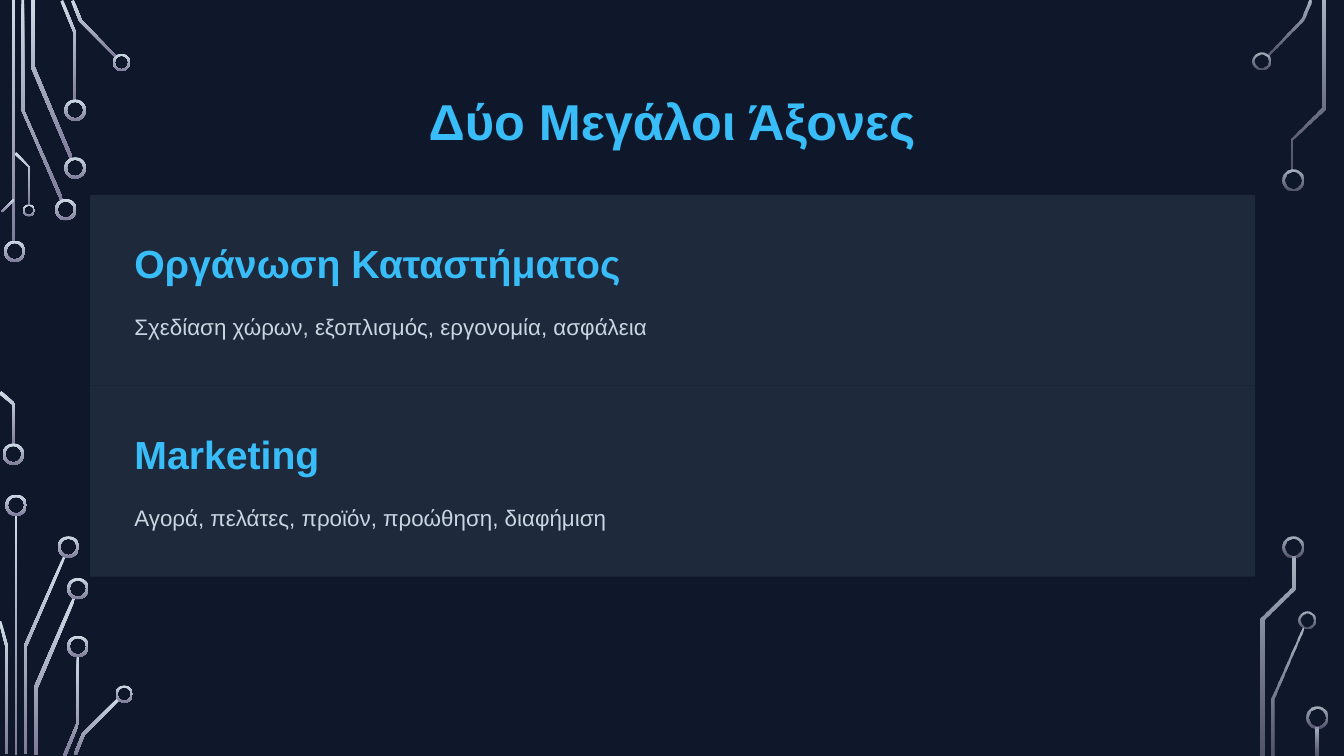
from dataclasses import dataclass
from typing import NamedTuple

from lxml.etree import SubElement
from pptx import Presentation
from pptx.dml.color import RGBColor
from pptx.enum.shapes import MSO_SHAPE
from pptx.enum.text import PP_ALIGN
from pptx.oxml.ns import qn
from pptx.util import Cm, Pt


@dataclass(frozen=True)
class Theme:
    back: str = "0F172A"
    panel: str = "1E293B"
    accent: str = "38BDF8"
    body: str = "CBD5E1"
    light: str = "CEDBE6"
    dark: str = "7F7B9A"
    font: str = "Arial"
    title_size: int = 27
    head_size: int = 21
    body_size: int = 12


class Ring(NamedTuple):
    left: float
    top: float
    size: float


class Bar(NamedTuple):
    left: float
    top: float
    height: float


class Side(NamedTuple):
    bars: list
    traces: list
    rings: list
    alphas: tuple


class Topic(NamedTuple):
    head: str
    body: str


class Style(NamedTuple):
    size: int
    color: str
    bold: bool
    lead: float
    align: PP_ALIGN


THEME = Theme()
UNIT = Cm(0.0254)
BAR_WIDTH = 0.02
RING_WALL = 0.115
TITLE = Style(THEME.title_size, THEME.accent, True, 1.2, PP_ALIGN.CENTER)
HEAD = Style(THEME.head_size, THEME.accent, True, 1.2, PP_ALIGN.LEFT)
BODY = Style(THEME.body_size, THEME.body, False, 1.4, PP_ALIGN.LEFT)

LEFT = Side(
    bars=[Bar(0.09, 0, 1.79), Bar(0.11, 3.82, 1.8)],
    traces=[
        [(45, 149), (16, 82), (16, 0), (18, 0), (18, 82), (47, 148)],
        [(52, 118), (23, 50), (23, 0), (26, 0), (26, 50), (54, 117)],
        [(57, 75), (55, 75), (55, 25), (45, 1), (47, 0), (57, 25)],
        [(86, 43), (59, 16), (53, 1), (55, 0), (61, 15), (87, 42)],
        [(2, 158), (1, 157), (10, 148), (11, 149)],
        [(11, 331), (9, 331), (9, 301), (-1, 293), (1, 291), (11, 300)],
        [(22, 152), (21, 152), (21, 124), (11, 115), (12, 113), (22, 124)],
        [(20, 561), (18, 561), (18, 480), (47, 414), (49, 414), (20, 481)],
        [(6, 561), (4, 561), (4, 481), (-1, 462), (1, 462), (6, 481)],
        [(28, 562), (25, 562), (25, 512), (54, 445), (56, 446), (28, 512)],
        [(49, 563), (47, 562), (57, 538), (57, 488), (59, 488), (59, 538)],
        [(57, 562), (55, 561), (61, 546), (88, 519), (89, 521), (63, 547)],
    ],
    rings=[
        Ring(0.03, 1.79, 0.16), Ring(0.02, 3.3, 0.16), Ring(0.41, 1.48, 0.16),
        Ring(0.48, 1.17, 0.16), Ring(0.48, 0.74, 0.16), Ring(0.84, 0.4, 0.13),
        Ring(0.17, 1.52, 0.09), Ring(0.04, 3.68, 0.16), Ring(0.43, 3.99, 0.16),
        Ring(0.5, 4.3, 0.16), Ring(0.5, 4.73, 0.16), Ring(0.86, 5.1, 0.13),
    ],
    alphas=(100, 100),
)
RIGHT = Side(
    bars=[Bar(9.79, 5.41, 0.21)],
    traces=[
        [(943, 42), (942, 41), (968, 14), (974, 0), (976, 1), (970, 15)],
        [(948, 562), (946, 562), (946, 520), (969, 467), (970, 468), (948, 520)],
        [(962, 127), (961, 127), (961, 103), (983, 80), (983, 0), (986, 0),
         (986, 81), (962, 104)],
        [(941, 562), (938, 562), (938, 460), (961, 437), (961, 414), (964, 414),
         (964, 438), (941, 461)],
    ],
    rings=[
        Ring(9.32, 0.39, 0.13), Ring(9.54, 1.26, 0.16), Ring(9.66, 4.55, 0.13),
        Ring(9.54, 3.99, 0.16), Ring(9.72, 5.26, 0.16),
    ],
    alphas=(80, 60),
)
TOPICS = [
    Topic("Οργάνωση Καταστήματος", "Σχεδίαση χώρων, εξοπλισμός, εργονομία, ασφάλεια"),
    Topic("Marketing", "Αγορά, πελάτες, προϊόν, προώθηση, διαφήμιση"),
]


def scale(*values: float) -> list:
    return [Cm(value * 2.54) for value in values]


def shade(shape, alphas: tuple) -> None:
    shape.shadow.inherit = False
    shape.line.fill.background()
    shape.fill.gradient()
    shape.fill.gradient_angle = 270
    stops = shape.fill.gradient_stops
    for stop, color, place in zip(stops, (THEME.light, THEME.dark), (0, 1)):
        stop.color.rgb = RGBColor.from_string(color)
        stop.position = place
    for node, alpha in zip(shape.element.spPr.iter(qn("a:srgbClr")), alphas):
        if alpha < 100:
            SubElement(node, qn("a:alpha")).set("val", str(alpha * 1000))


def draw_side(slide, side: Side) -> None:
    for bar in side.bars:
        box = scale(bar.left, bar.top, BAR_WIDTH, bar.height)
        shade(slide.shapes.add_shape(MSO_SHAPE.RECTANGLE, *box), side.alphas)
    for first, *rest in side.traces:
        pen = slide.shapes.build_freeform(*first, scale=UNIT)
        pen.add_line_segments(rest, close=True)
        shade(pen.convert_to_shape(), side.alphas)
    for ring in side.rings:
        box = scale(ring.left, ring.top, ring.size, ring.size)
        shape = slide.shapes.add_shape(MSO_SHAPE.DONUT, *box)
        shape.adjustments[0] = RING_WALL
        shade(shape, side.alphas)


def draw_panel(slide, top: float, height: float) -> None:
    box = scale(0.67, top, 8.67, height)
    panel = slide.shapes.add_shape(MSO_SHAPE.RECTANGLE, *box)
    panel.shadow.inherit = False
    panel.fill.solid()
    panel.fill.fore_color.rgb = RGBColor.from_string(THEME.panel)
    panel.line.fill.background()


def write(slide, text: str, box: tuple, style: Style) -> None:
    frame = slide.shapes.add_textbox(*scale(*box)).text_frame
    frame.word_wrap = True
    frame.margin_left = frame.margin_right = 0
    frame.margin_top = frame.margin_bottom = 0
    frame.text = text
    line = frame.paragraphs[0]
    line.alignment = style.align
    line.line_spacing = Pt(style.size * style.lead)
    font = line.runs[0].font
    font.name = THEME.font
    font.size = Pt(style.size)
    font.bold = style.bold
    font.color.rgb = RGBColor.from_string(style.color)


def main() -> None:
    deck = Presentation()
    deck.slide_width, deck.slide_height = scale(10, 5.625)
    slide = deck.slides.add_slide(deck.slide_layouts[6])
    fill = slide.background.fill
    fill.solid()
    fill.fore_color.rgb = RGBColor.from_string(THEME.back)

    for side in (LEFT, RIGHT):
        draw_side(slide, side)

    start, pitch = 1.45, 1.42
    for row in range(len(TOPICS)):
        draw_panel(slide, start + row * pitch, pitch)
    write(slide, "Δύο Μεγάλοι Άξονες", (0.58, 0.67, 8.84, 0.45), TITLE)
    for row, topic in enumerate(TOPICS):
        top = start + 0.33 + row * pitch
        write(slide, topic.head, (1, top, 8.16, 0.35), HEAD)
        write(slide, topic.body, (1, top + 0.52, 8.16, 0.23), BODY)
    deck.save("out.pptx")


if __name__ == "__main__":
    main()
